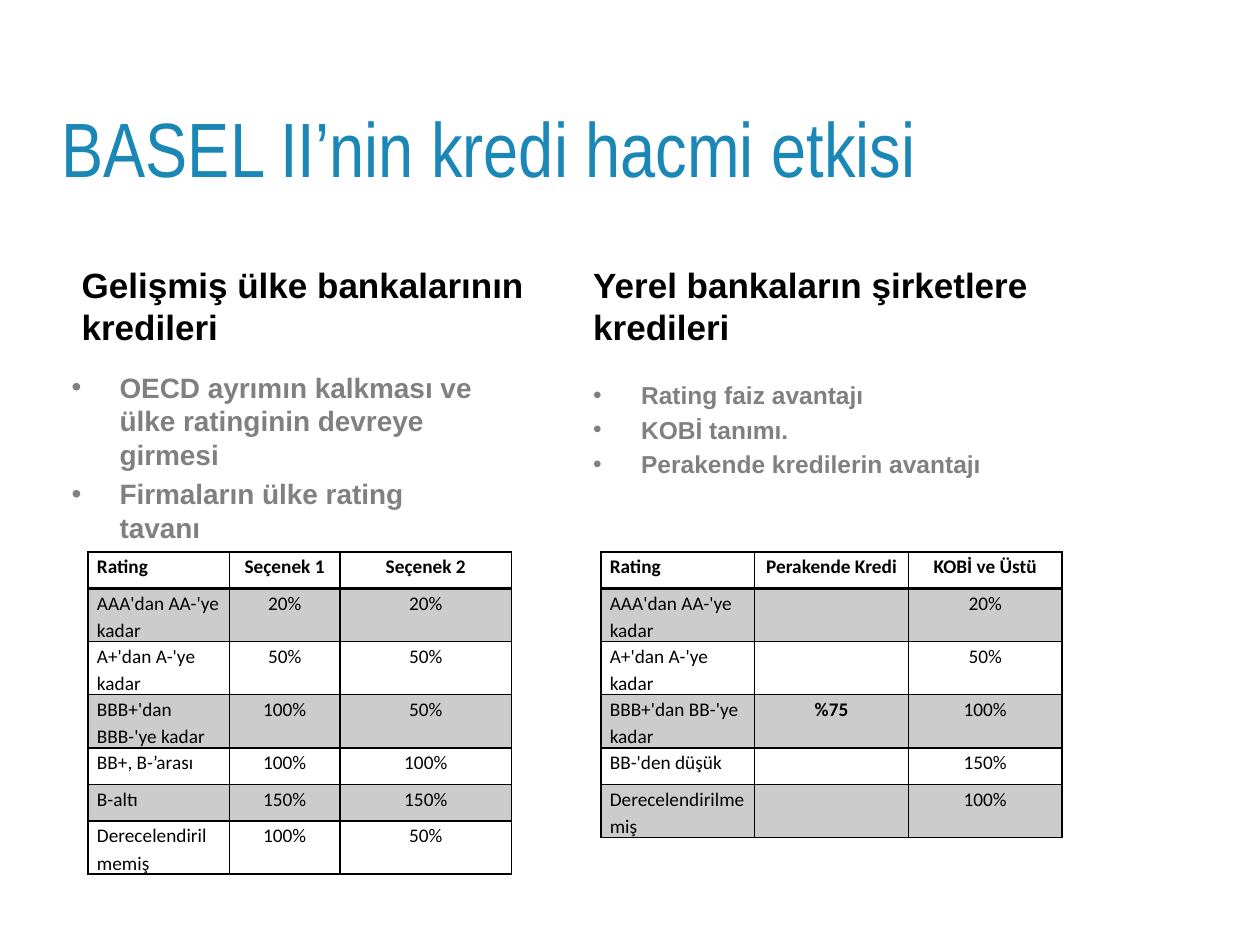
from dataclasses import dataclass

from lxml import etree
from pptx import Presentation
from pptx.dml.color import RGBColor
from pptx.enum.text import MSO_ANCHOR, PP_ALIGN
from pptx.oxml.ns import qn
from pptx.util import Inches, Pt

LEFT, CENTER = PP_ALIGN.LEFT, PP_ALIGN.CENTER
TOP, MIDDLE, BOTTOM = MSO_ANCHOR.TOP, MSO_ANCHOR.MIDDLE, MSO_ANCHOR.BOTTOM
BLACK, GRAY, BLUE = "000000", "808080", "1B87B7"
BULLET_INDENT = 0.38
CELL_SIZE = 11


@dataclass
class TextBlock:
    left: float
    top: float
    width: float
    height: float
    size: float
    color: str
    lines: list[str]
    bulleted: bool = False


@dataclass
class RatingTable:
    left: float
    top: float
    column_widths: list[float]
    row_heights: list[float]
    rows: list[list[str]]
    bold_values: tuple[str, ...] = ()


TEXT_BLOCKS = [
    TextBlock(0.55, 2.11, 3.8, 0.7, 20, BLACK, ["Gelişmiş ülke bankalarının kredileri"]),
    TextBlock(0.47, 2.89, 3.41, 1.56, 16, GRAY, [
        "OECD ayrımın kalkması ve ülke ratinginin devreye girmesi",
        "Firmaların ülke rating tavanı",
    ], bulleted=True),
    TextBlock(4.61, 2.11, 3.91, 0.7, 20, BLACK, ["Yerel bankaların şirketlere kredileri"]),
    TextBlock(4.61, 2.97, 4.42, 3.91, 14, GRAY, [
        "Rating faiz avantajı",
        "KOBİ tanımı.",
        "Perakende kredilerin avantajı",
    ], bulleted=True),
]

TABLES = [
    RatingTable(4.77, 4.38, [1.22] * 3, [0.29, 0.29, 0.31, 0.29, 0.29, 0.29], [
        ["Rating", "Perakende Kredi", "KOBİ ve Üstü"],
        ["AAA'dan AA-'ye kadar", "", "20%"],
        ["A+'dan A-'ye kadar", "", "50%"],
        ["BBB+'dan BB-'ye kadar", "%75", "100%"],
        ["BB-'den düşük", "", "150%"],
        ["Derecelendirilmemiş", "", "100%"],
    ], bold_values=("%75",)),
    RatingTable(0.7, 4.38, [1.12, 0.88, 1.36], [0.29, 0.29, 0.31, 0.37, 0.29, 0.29, 0.29], [
        ["Rating", "Seçenek 1", "Seçenek 2"],
        ["AAA'dan AA-'ye kadar", "20%", "20%"],
        ["A+'dan A-'ye kadar", "50%", "50%"],
        ["BBB+'dan BBB-'ye kadar", "100%", "50%"],
        ["BB+, B-’arası", "100%", "100%"],
        ["B-altı", "150%", "150%"],
        ["Derecelendirilmemiş", "100%", "50%"],
    ]),
]


def add_span(para, text: str, font: str, size: float, color: str, bold: bool) -> None:
    span = para.add_run()
    span.text = text
    span.font.name = font
    span.font.size = Pt(size)
    span.font.bold = bold
    span.font.color.rgb = RGBColor.from_string(color)


def add_bullet(para) -> None:
    properties = para._p.get_or_add_pPr()
    properties.set("marL", str(Inches(BULLET_INDENT)))
    properties.set("indent", str(-Inches(BULLET_INDENT)))
    etree.SubElement(properties, qn("a:buFont"), typeface="Arial")
    etree.SubElement(properties, qn("a:buChar"), char="•")


def add_title(page, text: str) -> None:
    title = page.shapes.title
    title.left, title.top = Inches(0.39), Inches(0.62)
    title.width, title.height = Inches(9), Inches(1.09)
    title.text_frame.vertical_anchor = MIDDLE
    para = title.text_frame.paragraphs[0]
    para.alignment = LEFT
    add_span(para, text, "Arial Narrow", 44, BLUE, False)


def add_text_block(page, block: TextBlock) -> None:
    box = page.shapes.add_textbox(Inches(block.left), Inches(block.top),
                                  Inches(block.width), Inches(block.height))
    frame = box.text_frame
    frame.word_wrap = True
    frame.vertical_anchor = TOP if block.bulleted else BOTTOM
    for index, line in enumerate(block.lines):
        para = frame.add_paragraph() if index else frame.paragraphs[0]
        if index:
            para.space_before = Pt(round(block.size * 0.2, 1))
        if block.bulleted:
            add_bullet(para)
        add_span(para, line, "Arial", block.size, block.color, True)


def set_borders(cell, top: float, bottom: float) -> None:
    """Draw black borders, 1 pt at the sides; must run before the cell is filled."""
    properties = cell._tc.get_or_add_tcPr()
    for tag, width in (("lnL", 1), ("lnR", 1), ("lnT", top), ("lnB", bottom)):
        line = etree.SubElement(properties, qn(f"a:{tag}"), w=str(Pt(width)))
        fill = etree.SubElement(line, qn("a:solidFill"))
        etree.SubElement(fill, qn("a:srgbClr"), val=BLACK)


def shade(cell) -> None:
    """Fill the cell with black at 20% opacity."""
    cell.fill.solid()
    cell.fill.fore_color.rgb = RGBColor.from_string(BLACK)
    color = cell._tc.tcPr.find(qn("a:solidFill")).find(qn("a:srgbClr"))
    etree.SubElement(color, qn("a:alpha"), val="20000")


def format_cell(cell, text: str, row: int, column: int, bold: bool) -> None:
    cell.margin_left = cell.margin_right = Inches(0.07)
    cell.margin_top = cell.margin_bottom = 0
    set_borders(cell, top=2 if row == 1 else 1, bottom=2 if row == 0 else 1)
    if row % 2:
        shade(cell)
    else:
        cell.fill.background()
    para = cell.text_frame.paragraphs[0]
    para.alignment = CENTER if column else LEFT
    para.line_spacing = 1.15
    if text:
        add_span(para, text, "Calibri", CELL_SIZE, BLACK, bold)
    else:
        etree.SubElement(para._p, qn("a:endParaRPr"), sz=str(CELL_SIZE * 100))


def add_rating_table(page, data: RatingTable) -> None:
    table = page.shapes.add_table(
        len(data.rows), len(data.column_widths), Inches(data.left), Inches(data.top),
        Inches(sum(data.column_widths)), Inches(sum(data.row_heights))).table
    table.first_row = table.horz_banding = False
    for column, width in zip(table.columns, data.column_widths):
        column.width = Inches(width)
    for row, height in zip(table.rows, data.row_heights):
        row.height = Inches(height)
    for row, texts in enumerate(data.rows):
        for column, text in enumerate(texts):
            bold = row == 0 or text in data.bold_values
            format_cell(table.cell(row, column), text, row, column, bold)


def main() -> None:
    deck = Presentation()
    deck.slide_width, deck.slide_height = Inches(10), Inches(7.5)
    page = deck.slides.add_slide(deck.slide_layouts.get_by_name("Title Only"))
    add_title(page, "BASEL II’nin kredi hacmi etkisi")
    for block in TEXT_BLOCKS:
        add_text_block(page, block)
    for data in TABLES:
        add_rating_table(page, data)
    deck.save("out.pptx")


if __name__ == "__main__":
    main()
